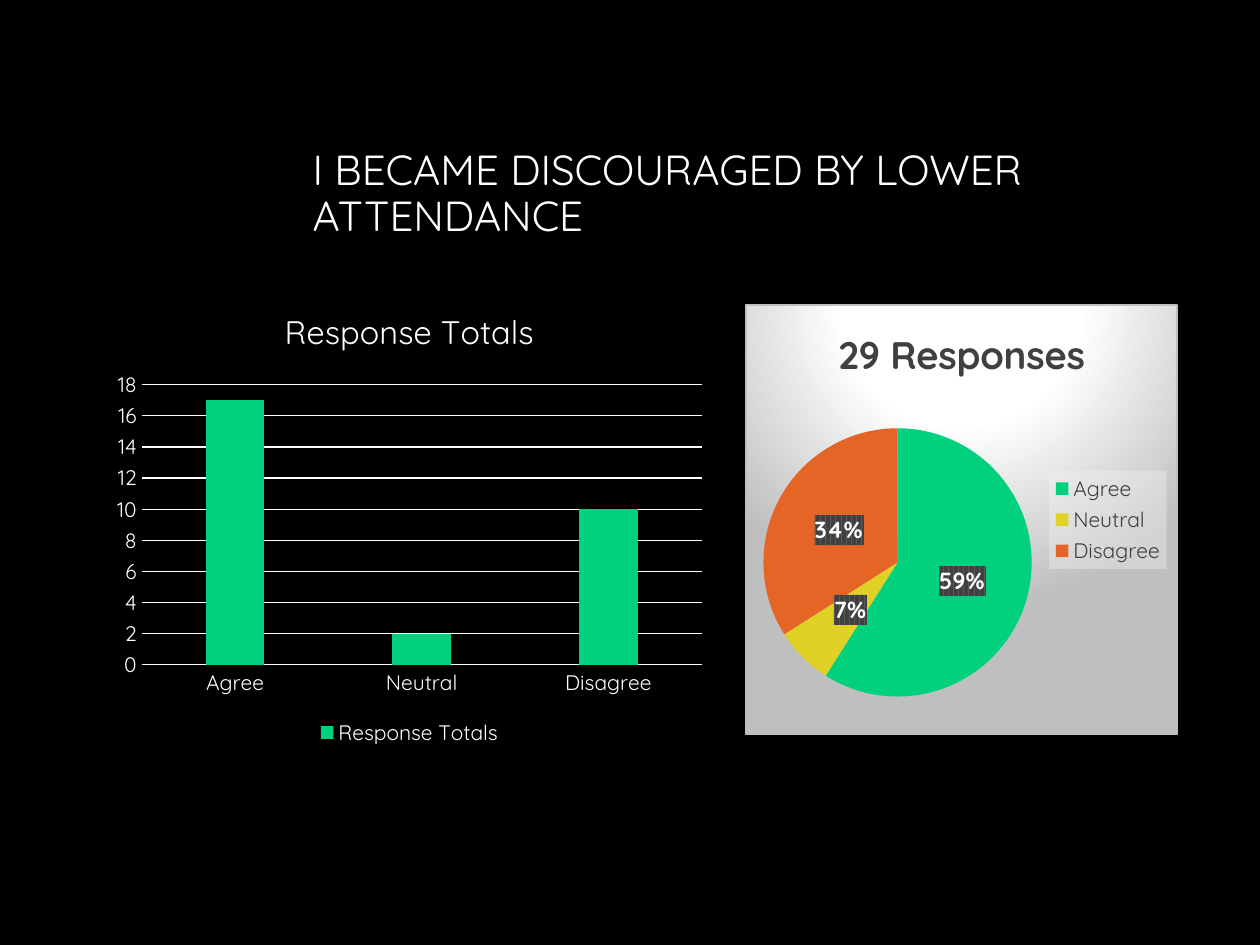
from lxml.etree import fromstring
from pptx import Presentation
from pptx.chart.data import CategoryChartData
from pptx.dml.color import RGBColor
from pptx.enum.chart import XL_CHART_TYPE, XL_LABEL_POSITION, XL_LEGEND_POSITION, XL_TICK_MARK
from pptx.enum.text import MSO_ANCHOR
from pptx.oxml.ns import nsdecls, qn
from pptx.util import Pt

FONT = "Quicksand"
WHITE, GREY, DARK = "FFFFFF", "BFBFBF", "404040"
GREEN, YELLOW, ORANGE = "01D17D", "E1D126", "E56526"
CATEGORIES = ["Agree", "Neutral", "Disagree"]

PANEL_FILL = f"""
<a:gradFill><a:gsLst>
  <a:gs pos="0"><a:srgbClr val="{WHITE}"/></a:gs>
  <a:gs pos="39000"><a:srgbClr val="{WHITE}"/></a:gs>
  <a:gs pos="100000"><a:srgbClr val="{GREY}"/></a:gs>
</a:gsLst><a:path path="circle">
  <a:fillToRect l="50000" t="-80000" r="50000" b="180000"/>
</a:path></a:gradFill>
<a:ln w="9525"><a:solidFill><a:srgbClr val="{GREY}"/></a:solidFill></a:ln>"""
LEGEND_FILL = """
<a:solidFill><a:srgbClr val="F2F2F2"><a:alpha val="39000"/></a:srgbClr></a:solidFill>"""
LABEL_FILL = f"""
<a:pattFill prst="dkVert"><a:fgClr><a:srgbClr val="{DARK}"/></a:fgClr>
<a:bgClr><a:srgbClr val="595959"/></a:bgClr></a:pattFill>"""


def color(hex_value):
    return RGBColor.from_string(hex_value)


def style_font(font, size, hex_value=WHITE, bold=False):
    font.name = FONT
    font.size = Pt(size)
    font.bold = bold
    font.color.rgb = color(hex_value)


def paint(fill, hex_value):
    fill.solid()
    fill.fore_color.rgb = color(hex_value)


def style_line(line):
    paint(line.fill, WHITE)
    line.width = Pt(0.75)


def add_shape_properties(chart_part, content):
    """Put fill and line XML before the text properties of a chart part."""
    properties = fromstring(f"<c:spPr {nsdecls('c', 'a')}>{content}</c:spPr>")
    chart_part.find(qn("c:txPr")).addprevious(properties)


def add_title(slide, text, left, top, width, height):
    shape = slide.shapes.add_textbox(Pt(left), Pt(top), Pt(width), Pt(height))
    frame = shape.text_frame
    frame.word_wrap = True
    frame.vertical_anchor = MSO_ANCHOR.MIDDLE
    frame.text = text
    paragraph = frame.paragraphs[0]
    paragraph.line_spacing = 0.9
    style_font(paragraph.runs[0].font, 24)


def add_chart(slide, kind, name, values, box, title_style, legend_position, legend_color):
    data = CategoryChartData()
    data.categories = CATEGORIES
    data.add_series(name, values)
    chart = slide.shapes.add_chart(kind, *map(Pt, box), data).chart
    style_font(chart.font, 10)

    chart.has_title = True
    chart.chart_title.include_in_layout = False
    frame = chart.chart_title.text_frame
    frame.text = name
    style_font(frame.paragraphs[0].runs[0].font, *title_style)

    chart.has_legend = True
    chart.legend.position = legend_position
    chart.legend.include_in_layout = False
    style_font(chart.legend.font, 12, legend_color)
    return chart


def add_column_chart(slide):
    chart = add_chart(slide, XL_CHART_TYPE.COLUMN_CLUSTERED, "Response Totals", [17, 2, 10],
                      (60, 163.5, 348, 265.5), (18.6, WHITE), XL_LEGEND_POSITION.BOTTOM, WHITE)
    plot = chart.plots[0]
    plot.gap_width = 219
    plot.overlap = -27
    plot.vary_by_categories = False
    paint(plot.series[0].format.fill, GREEN)

    for axis in (chart.category_axis, chart.value_axis):
        axis.major_tick_mark = XL_TICK_MARK.NONE
        axis.minor_tick_mark = XL_TICK_MARK.NONE
        style_font(axis.tick_labels.font, 12)
    style_line(chart.category_axis.format.line)
    value_axis = chart.value_axis
    value_axis.format.line.fill.background()
    value_axis.minimum_scale, value_axis.maximum_scale = 0, 18
    value_axis.major_unit = 2
    value_axis.has_major_gridlines = True
    style_line(value_axis.major_gridlines.format.line)


def add_pie_chart(slide):
    chart = add_chart(slide, XL_CHART_TYPE.PIE, "29 Responses", [59, 7, 34],
                      (426, 174, 247, 246), (22, DARK, True), XL_LEGEND_POSITION.RIGHT, DARK)
    plot = chart.plots[0]
    plot.vary_by_categories = True
    series = plot.series[0]
    for index, hex_value in enumerate((GREEN, YELLOW, ORANGE)):
        paint(series.points[index].format.fill, hex_value)

    labels = series.data_labels
    labels.show_percentage = True
    labels.show_value = False
    labels.number_format = "0%"
    labels.number_format_is_linked = False
    labels.position = XL_LABEL_POSITION.CENTER
    style_font(labels.font, 13.3, WHITE, True)

    root = chart.element
    add_shape_properties(root, PANEL_FILL)
    add_shape_properties(next(root.iter(qn("c:legend"))), LEGEND_FILL)
    add_shape_properties(next(root.iter(qn("c:dLbls"))), LABEL_FILL)


def main():
    presentation = Presentation()
    presentation.slide_width = Pt(720)
    presentation.slide_height = Pt(540)
    slide = presentation.slides.add_slide(presentation.slide_layouts[6])
    paint(slide.background.fill, "000000")
    add_column_chart(slide)
    add_title(slide, "I BECAME DISCOURAGED BY LOWER ATTENDANCE", 171.5, 60.5, 502, 101.5)
    add_pie_chart(slide)
    presentation.save("out.pptx")


if __name__ == "__main__":
    main()
